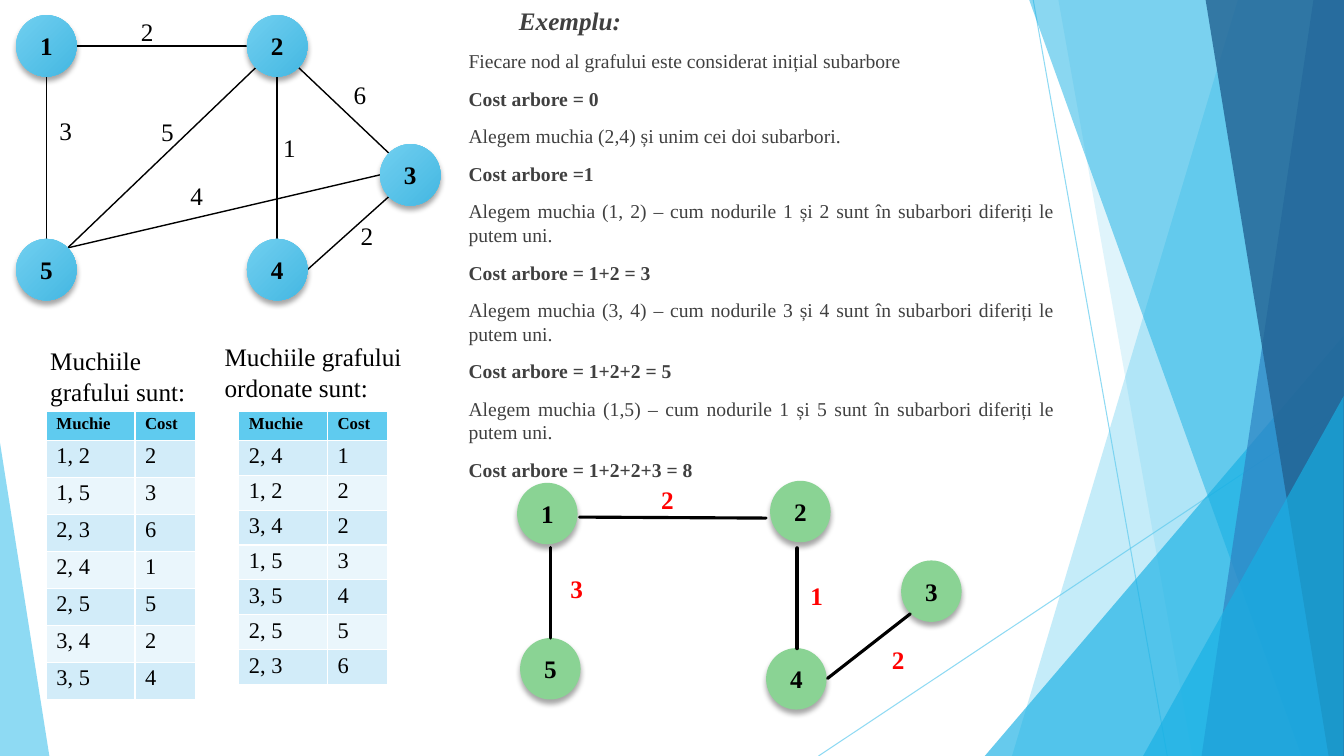
from math import cos, radians, sin

from pptx import Presentation
from pptx import util as u
from pptx.dml.color import RGBColor
from pptx.enum import shapes, text
from pptx.oxml import xmlchemy
from pptx.oxml.ns import qn

BLACK = RGBColor(0, 0, 0)
RED = RGBColor(255, 0, 0)
GREY = RGBColor(0x40, 0x40, 0x40)
SKY = RGBColor(0x5F, 0xCB, 0xEF)
CYAN = RGBColor(0x17, 0xB0, 0xE4)
BLUE = RGBColor(0x2E, 0x83, 0xC3)
NAVY = RGBColor(0x22, 0x62, 0x92)
PALE = RGBColor(0x71, 0xCF, 0xF0)
DEEP = RGBColor(0x44, 0xB8, 0xE2)
GREEN = RGBColor(0x8A, 0xD3, 0x94)
BANDS = RGBColor(0xD2, 0xEC, 0xF9), RGBColor(0xEA, 0xF6, 0xFC)

FONT = "Times New Roman"
COLS, ROWS = 133.33, 75  # grid cells of a tenth of an inch
NODE_W, NODE_H = 6, 6.1
ANGLES = dict(e=0, se=45, s=90, sw=135, w=180, nw=225, n=270, ne=315)


def child(node, tag, **attrs):
    kid = xmlchemy.OxmlElement(tag)
    for key, val in attrs.items():
        kid.set(key, str(val))
    node.append(kid)
    return kid


def fade(fill, share):
    """Make a solid fill or line fill opaque to the given percentage."""
    tone = fill._xPr.find(qn("a:solidFill"))[0]
    child(tone, "a:alpha", val=share * 1000)


def port(spot, side):
    """Point on the rim of the node whose corner is at spot."""
    turn = radians(ANGLES[side])
    return (spot[0] + NODE_W / 2 * (1 + cos(turn)),
            spot[1] + NODE_H / 2 * (1 + sin(turn)))


class Deck:
    def __init__(self):
        self.prs = Presentation()
        self.prs.slide_width, self.prs.slide_height = u.Inches(13.33), u.Inches(7.5)
        self.slide = self.prs.slides.add_slide(self.prs.slide_layouts[6])
        self.items = self.slide.shapes

    def x(self, cols):
        return round(self.prs.slide_width * cols / COLS)

    def y(self, rows):
        return round(self.prs.slide_height * rows / ROWS)

    def box(self, x, y, w, h):
        return self.x(x), self.y(y), self.x(w), self.y(h)

    def run(self, para, words, size=18, tone=BLACK, bold=False, slant=False):
        run = para.add_run()
        run.text = words
        font = run.font
        font.name, font.size, font.bold, font.italic = FONT, u.Pt(size), bold, slant
        font.color.rgb = tone

    def paint(self, shape, tone, share=100):
        shape.shadow.inherit = False
        shape.fill.solid()
        shape.fill.fore_color.rgb = tone
        fade(shape.fill, share)
        shape.line.fill.background()

    def line(self, start, end, tone=BLACK, width=1.0, share=100, cap="flat"):
        link = self.items.add_connector(
            shapes.MSO_CONNECTOR.STRAIGHT, self.x(start[0]), self.y(start[1]),
            self.x(end[0]), self.y(end[1]))
        link.line.color.rgb = tone
        link.line.width = u.Pt(width)
        fade(link.line.fill, share)
        link.line._get_or_add_ln().set("cap", cap)
        child(link.element.spPr, "a:effectLst")

    def plane(self, points, tone, share):
        spots = [(self.x(x), self.y(y)) for x, y in points]
        form = self.items.build_freeform(*spots[0], scale=1.0)
        form.add_line_segments(spots[1:], close=True)
        self.paint(form.convert_to_shape(), tone, share)

    def wedge(self, box, peak, tone, share):
        shape = self.items.add_shape(shapes.MSO_SHAPE.ISOSCELES_TRIANGLE, *self.box(*box))
        shape.adjustments[0] = peak
        self.paint(shape, tone, share)

    def node(self, name, spot, tone=None):
        """Numbered disc with a soft shadow; blue gradient if no tone is given."""
        disc = self.items.add_shape(shapes.MSO_SHAPE.OVAL,
                                    *self.box(*spot, NODE_W, NODE_H))
        self.paint(disc, tone or PALE)
        if not tone:
            disc.fill.gradient()
            disc.fill.gradient_angle = 315
            for stop, hue in zip(disc.fill.gradient_stops, (PALE, DEEP)):
                stop.color.rgb = hue
        glow = child(disc.element.spPr.find(qn("a:effectLst")), "a:outerShdw",
                     blurRad=u.Pt(4), dist=u.Pt(3), dir=90 * 60000, rotWithShape=0)
        child(child(glow, "a:srgbClr", val="000000"), "a:alpha", val=35000)
        frame = disc.text_frame
        frame.vertical_anchor = text.MSO_ANCHOR.MIDDLE
        para = frame.paragraphs[0]
        para.alignment = text.PP_ALIGN.CENTER
        self.run(para, str(name), bold=True)

    def label(self, words, box, **style):
        frame = self.items.add_textbox(*self.box(*box)).text_frame
        frame.word_wrap = True
        self.run(frame.paragraphs[0], words, **style)

    def prose(self, box, title, lines):
        """Justified steps under an indented title; cost lines are bold."""
        frame = self.items.add_textbox(*self.box(*box)).text_frame
        frame.word_wrap = True
        for at, words in enumerate([title, *lines]):
            para = frame.add_paragraph() if at else frame.paragraphs[0]
            para.alignment = text.PP_ALIGN.JUSTIFY
            if at:
                para.space_before = u.Pt(10)
                self.run(para, words, 14, GREY, words.startswith("Cost"))
            else:
                para._p.get_or_add_pPr().set("indent", str(self.x(5)))
                self.run(para, words, 18, GREY, True, True)

    def table(self, x, y, pitch, edges):
        rows = [("Muchie", "Cost"), *edges]
        grid = self.items.add_table(len(rows), 2, *self.box(
            x, y, 14.8, 2.9 + pitch * len(edges))).table
        for col, width in zip(grid.columns, (8.8, 6)):
            col.width = self.x(width)
        for r, row in enumerate(rows):
            grid.rows[r].height = self.y(pitch if r else 2.9)
            for c, words in enumerate(row):
                cell = grid.cell(r, c)
                cell.margin_top = cell.margin_bottom = self.y(0.35)
                cell.fill.solid()
                cell.fill.fore_color.rgb = BANDS[(r - 1) % 2] if r else SKY
                self.run(cell.text_frame.paragraphs[0], str(words),
                         16 if r else 12, bold=not r)


def backdrop(deck):
    deck.line((102.5, 0), (115.8, ROWS), SKY, 0.75, 70)
    deck.line((COLS, 40.3), (81.2, ROWS), SKY, 0.75, 70)

    def band(top, foot, tone, share):
        deck.plane([(top, 0), (COLS, 0), (COLS, ROWS), (foot, ROWS)], tone, share)

    band(122.8, 100.4, SKY, 36)
    band(105, 118.3, SKY, 20)
    deck.wedge((97.7, 33.3, 35.6, 41.7), 1, CYAN, 66)
    band(102.1, 129.1, CYAN, 50)
    band(130.3, 119.2, BLUE, 70)
    band(119.6, 131.8, NAVY, 80)
    deck.wedge((113.4, 39.3, 19.9, 35.7), 1, CYAN, 66)
    deck.wedge((0, 43.9, 4.9, 31.1), 0, SKY, 70)


def graph(deck):
    spots = {1: (1.6, 1.5), 2: (24.5, 1.5), 3: (37.7, 14.3), 4: (24.5, 23.7), 5: (1.6, 23.7)}
    links = [(1, "s", 5, "n", 3, 4.9, 10.9), (1, "e", 2, "w", 2, 13, 1.1),
             (2, "s", 4, "n", 1, 27.1, 12.6), (5, "ne", 3, "w", 4, 17.9, 17.4),
             (4, "e", 3, "sw", 2, 34.8, 21.4), (5, "ne", 2, "sw", 5, 15, 11),
             (2, "se", 3, "nw", 6, 34.1, 7.4)]
    for a, out, b, into, cost, x, y in links:
        deck.line(port(spots[a], out), port(spots[b], into))
        deck.label(str(cost), (x, y, 3.7, 4))
    for name, spot in spots.items():
        deck.node(name, spot)


def tree(deck):
    spots = {1: (51.3, 47.9), 2: (76.4, 47.7), 3: (89.4, 55.6), 4: (76, 64.3), 5: (51.6, 63.3)}
    for name, spot in spots.items():
        deck.node(name, spot, GREEN)
    links = [((79.1, 64.3), (79.1, 54.4), 3, 1, 79.4, 57.1),
             ((57.5, 51.3), (76, 51.4), 2.25, 2, 64.6, 47.6),
             ((82.1, 67.3), (90.3, 60.9), 2.25, 2, 87.5, 63.4),
             ((54.6, 54.3), (54.6, 63.3), 2.25, 3, 55.6, 56.4)]
    for start, end, width, cost, x, y in links:
        deck.line(start, end, width=width, cap="rnd")
        deck.label(str(cost), (x, y, 3.8, 4), tone=RED, bold=True)


def main():
    deck = Deck()
    backdrop(deck)
    graph(deck)
    edges = [("1, 2", 2), ("1, 5", 3), ("2, 3", 6), ("2, 4", 1),
             ("2, 5", 5), ("3, 4", 2), ("3, 5", 4)]
    deck.label("Muchiile grafului sunt:", (4, 33.8, 18.5, 7.1))
    deck.table(4.6, 40.8, 3.67, edges)
    deck.label("Muchiile grafului ordonate sunt:", (21.3, 33.4, 21.1, 7.1))
    order = sorted(edges, key=lambda edge: (edge[1], edge[0]))
    # ties keep the order in which the edges join the tree
    order[1:3] = [("1, 2", 2), ("3, 4", 2)]
    deck.table(23.7, 40.8, 3.46, order)

    def step(pair, a, b):
        return (f"Alegem muchia ({pair}) – cum nodurile {a} și {b} "
                "sunt în subarbori diferiți le putem uni.")

    tree(deck)
    deck.prose((45.5, 0, 60.1, 47.7), "Exemplu:", [
        "Fiecare nod al grafului este considerat inițial subarbore",
        "Cost arbore = 0",
        "Alegem muchia (2,4) și unim cei doi subarbori.",
        "Cost arbore =1",
        step("1, 2", 1, 2), "Cost arbore = 1+2 = 3",
        step("3, 4", 3, 4), "Cost arbore = 1+2+2 = 5",
        step("1,5", 1, 5), "Cost arbore = 1+2+2+3 = 8"])
    deck.prs.save("out.pptx")


if __name__ == "__main__":
    main()
